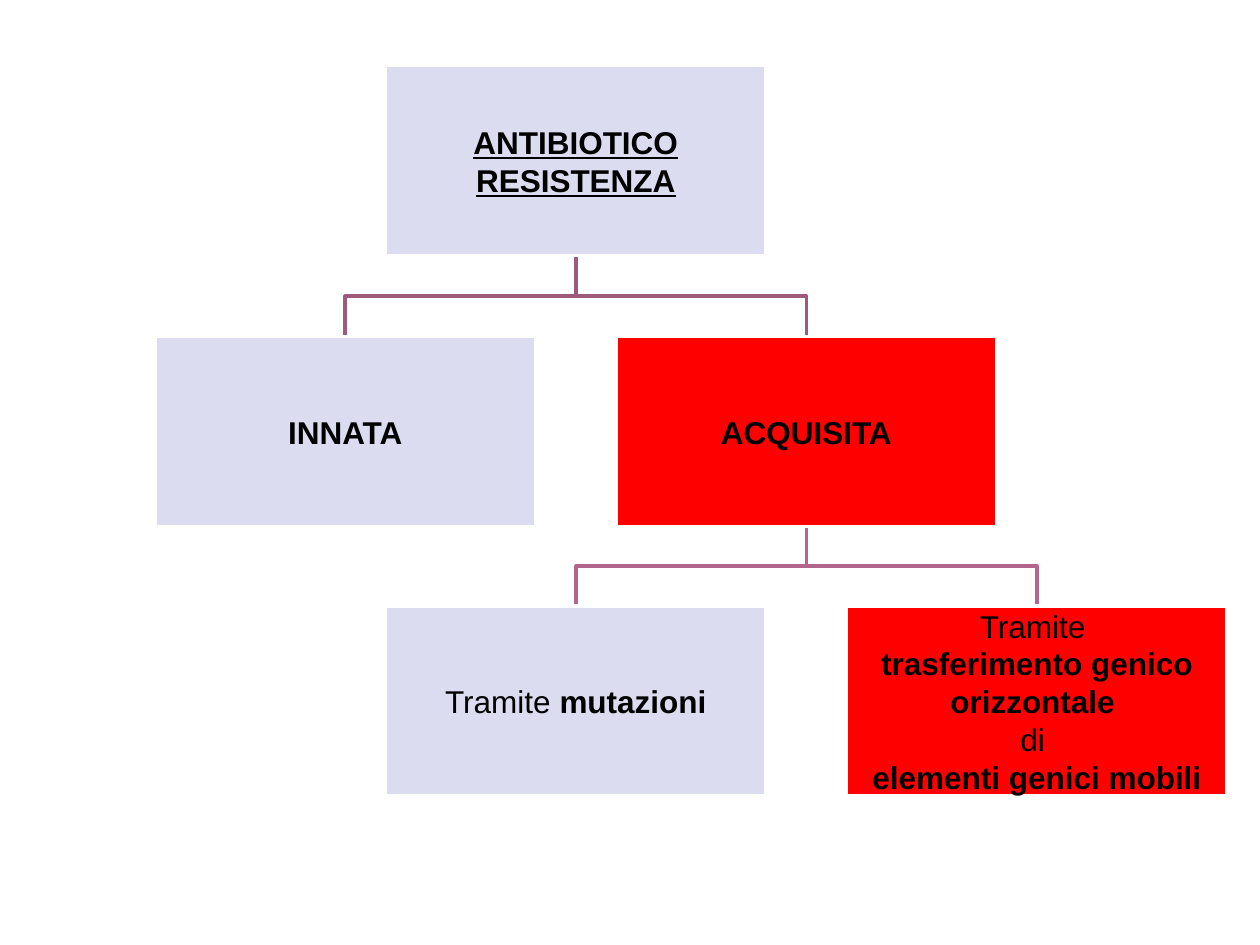
from pptx import Presentation
from pptx.dml.color import RGBColor
from pptx.enum.shapes import MSO_SHAPE
from pptx.enum.text import MSO_ANCHOR, PP_ALIGN
from pptx.util import Inches, Pt

BOX_W, BOX_H = 3.02, 1.51
LEVEL_TOPS = [0.52, 2.67, 4.81]
LAVENDER, RED = "DBDCF0", "FF0000"


def color(value):
    return RGBColor.from_string(value)


class Diagram:
    font, size, text_color = "Arial", Pt(18), "000000"
    line_width = Pt(2)

    def __init__(self, slide):
        self.shapes = slide.shapes.add_group_shape().shapes

    def branch(self, parent, child, line):
        """Draw an elbow from the parent's bottom to the child's top.

        Each node is given as (centre x, level).
        """
        (x1, level1), (x2, level2) = parent, child
        y1, y2 = LEVEL_TOPS[level1] + BOX_H, LEVEL_TOPS[level2]
        middle = (y1 + y2) / 2
        builder = self.shapes.build_freeform(Inches(x1), Inches(y1))
        points = [(x1, middle), (x2, middle), (x2, y2)]
        builder.add_line_segments([(Inches(x), Inches(y)) for x, y in points], close=False)
        sp = builder.convert_to_shape()
        sp.shadow.inherit = False
        sp.fill.background()
        sp.line.color.rgb = color(line)
        sp.line.width = self.line_width

    def box(self, node, fill, paragraphs, underline=None):
        """Add a node; each paragraph is a list of (text, bold) runs."""
        x, level = node
        sp = self.shapes.add_shape(
            MSO_SHAPE.RECTANGLE, Inches(x - BOX_W / 2), Inches(LEVEL_TOPS[level]),
            Inches(BOX_W), Inches(BOX_H))
        sp.shadow.inherit = False
        sp.fill.solid()
        sp.fill.fore_color.rgb = color(fill)
        sp.line.color.rgb = color("FFFFFF")
        sp.line.width = self.line_width
        tf = sp.text_frame
        tf.word_wrap = True
        tf.vertical_anchor = MSO_ANCHOR.MIDDLE
        tf.margin_left = tf.margin_right = tf.margin_top = tf.margin_bottom = Inches(0.01)
        for i, runs in enumerate(paragraphs):
            p = tf.add_paragraph() if i else tf.paragraphs[0]
            p.alignment = PP_ALIGN.CENTER
            for text, bold in runs:
                r = p.add_run()
                r.text = text
                r.font.name, r.font.size = self.font, self.size
                r.font.bold, r.font.underline = bold, underline
                r.font.color.rgb = color(self.text_color)


def main():
    prs = Presentation()
    prs.slide_width, prs.slide_height = Inches(10), Inches(7.5)
    diagram = Diagram(prs.slides.add_slide(prs.slide_layouts[6]))

    resistance, innate, acquired = (4.57, 0), (2.74, 1), (6.4, 1)
    mutations, transfer = (4.57, 2), (8.23, 2)

    for child in (transfer, mutations):
        diagram.branch(acquired, child, "B2668C")
    for child in (acquired, innate):
        diagram.branch(resistance, child, "9D5A7B")

    diagram.box(resistance, LAVENDER, [[("ANTIBIOTICO RESISTENZA", True)]], underline=True)
    diagram.box(innate, LAVENDER, [[("INNATA", True)]])
    diagram.box(acquired, RED, [[("ACQUISITA", True)]])
    diagram.box(mutations, LAVENDER, [[("Tramite ", False), ("mutazioni", True)]])
    diagram.box(transfer, RED, [
        [("Tramite ", False)],
        [("trasferimento genico orizzontale ", True)],
        [("di ", False)],
        [("elementi genici mobili", True)],
    ])
    prs.save("out.pptx")


if __name__ == "__main__":
    main()
